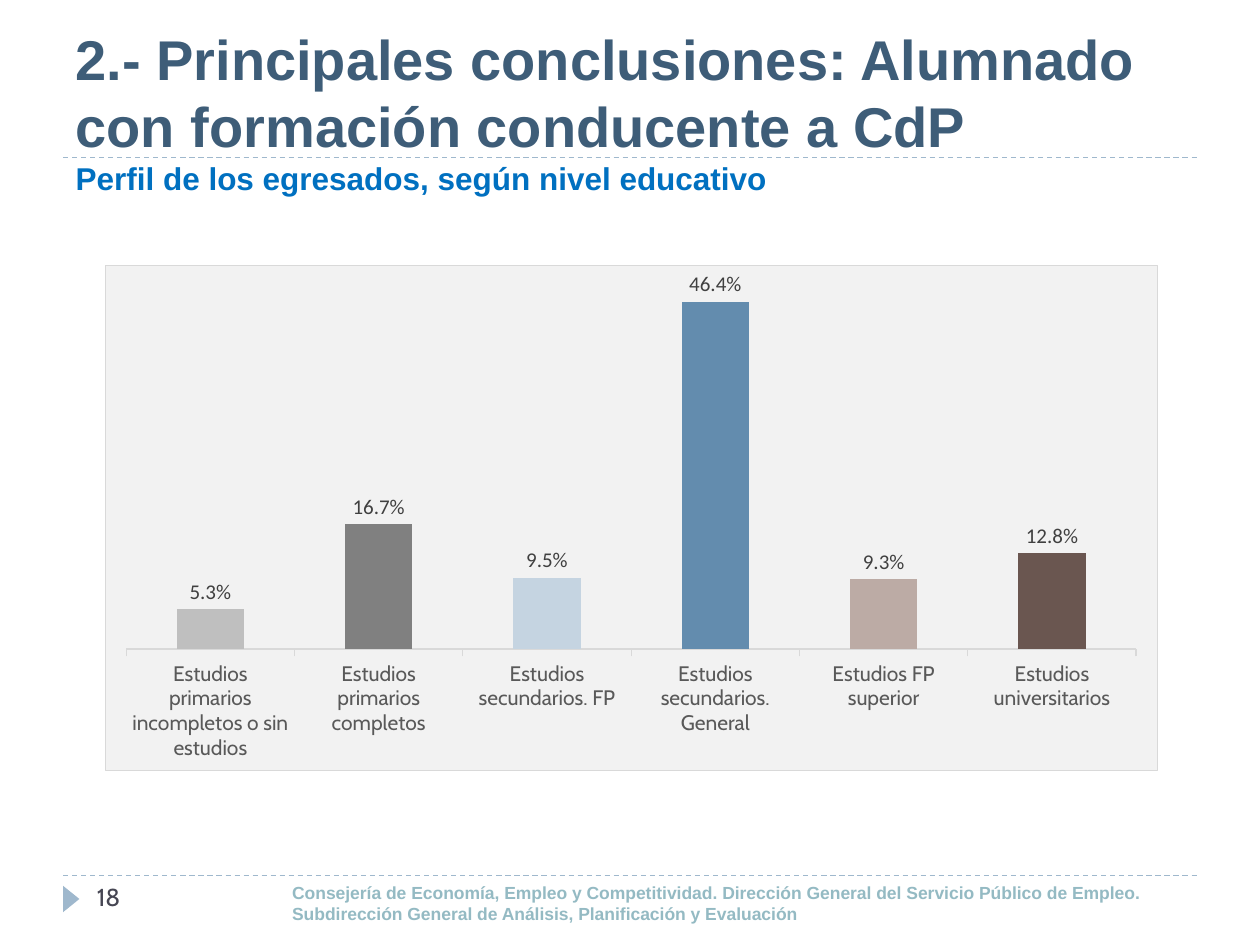
from dataclasses import dataclass

from lxml import etree
from pptx import Presentation
from pptx.chart.data import CategoryChartData
from pptx.dml.color import RGBColor
from pptx.enum.chart import XL_CHART_TYPE, XL_LABEL_POSITION, XL_TICK_LABEL_POSITION, XL_TICK_MARK
from pptx.enum.dml import MSO_LINE
from pptx.enum.shapes import MSO_CONNECTOR, MSO_SHAPE
from pptx.enum.text import MSO_ANCHOR, MSO_AUTO_SIZE, PP_ALIGN
from pptx.oxml.ns import qn
from pptx.util import Inches, Pt

COLUMN = XL_CHART_TYPE.COLUMN_CLUSTERED
OUTSIDE_END = XL_LABEL_POSITION.OUTSIDE_END
TICK_OUT, TICK_NONE = XL_TICK_MARK.OUTSIDE, XL_TICK_MARK.NONE


@dataclass(frozen=True)
class Theme:
    head: str = "Arial"
    body: str = "Cabin"
    label: str = "Calibri"
    title: str = "3E5D78"
    subtitle: str = "0070C0"
    accent: str = "9FB8CD"
    footer: str = "94BAC3"
    number: str = "464653"
    category: str = "595959"
    value: str = "404040"
    panel: str = "F2F2F2"
    border: str = "D9D9D9"
    title_pt: int = 32
    subtitle_pt: int = 18
    number_pt: int = 14
    chart_pt: int = 12
    footer_pt: int = 10


T = Theme()
W, H, MARGIN = 10, 7.5, 0.5
TITLE_RULE, FOOTER_TOP = 1.25, 6.95

TITLE = "2.- Principales conclusiones: Alumnado con formación conducente a CdP"
SUBTITLE = "Perfil de los egresados, según nivel educativo"
FOOTER = [
    "Consejería de Economía, Empleo y Competitividad. Dirección General del Servicio Público de Empleo.",
    "Subdirección General de Análisis, Planificación y Evaluación",
]
PAGE = "18"
LEVELS = [
    ("Estudios primarios incompletos o sin estudios", 0.053, "BFBFBF"),
    ("Estudios primarios completos", 0.167, "808080"),
    ("Estudios secundarios. FP", 0.095, "C5D4E1"),
    ("Estudios secundarios. General", 0.464, "638CAE"),
    ("Estudios FP superior", 0.093, "BCABA5"),
    ("Estudios universitarios", 0.128, "6A5650"),
]
PLOT = {"x": 0.02, "y": 0.02, "w": 0.96, "h": 0.74}


def rgb(value):
    return RGBColor.from_string(value)


def style(font, name, size, color, bold=False):
    font.name, font.size, font.bold = name, Pt(size), bold
    font.color.rgb = rgb(color)


def fill(fmt, color):
    fmt.fill.solid()
    fmt.fill.fore_color.rgb = rgb(color)


def add_rule(s, y):
    line = s.shapes.add_connector(
        MSO_CONNECTOR.STRAIGHT, Inches(MARGIN), Inches(y), Inches(W - MARGIN), Inches(y))
    line.line.color.rgb = rgb(T.accent)
    line.line.width = Pt(0.75)
    line.line.dash_style = MSO_LINE.DASH
    etree.SubElement(line._element.spPr, qn("a:effectLst"))


def add_text(s, box, lines, *look):
    tf = s.shapes.add_textbox(*map(Inches, box)).text_frame
    tf.word_wrap = True
    tf.text = "\n".join(lines)
    for p in tf.paragraphs:
        style(p.runs[0].font, *look)


def add_marker(s):
    sp = s.shapes.add_shape(
        MSO_SHAPE.ISOSCELES_TRIANGLE, Inches(0.46), Inches(7.07), Inches(0.21), Inches(0.13))
    sp.rotation = 90
    sp.shadow.inherit = False
    fill(sp, T.accent)
    sp.line.fill.background()


def set_title(s):
    sp = s.shapes.title
    sp.left, sp.top, sp.width, sp.height = map(Inches, (MARGIN, 0.13, W - 2 * MARGIN, 1.48))
    tf = sp.text_frame
    tf.auto_size = MSO_AUTO_SIZE.NONE
    tf.vertical_anchor = MSO_ANCHOR.BOTTOM
    p = tf.paragraphs[0]
    p.text = f"{TITLE}\v{SUBTITLE}"
    p.alignment = PP_ALIGN.LEFT
    style(p.runs[0].font, T.head, T.title_pt, T.title, True)
    style(p.runs[1].font, T.head, T.subtitle_pt, T.subtitle, True)
    for br in p._p.findall(qn("a:br")):
        etree.SubElement(br, qn("a:rPr"), sz=str(T.title_pt * 100))


def format_panel(chart):
    space = chart._chartSpace
    sppr = etree.Element(qn("c:spPr"))
    line = etree.Element(qn("a:ln"), w=str(Pt(0.75)))
    for parent, color in ((sppr, T.panel), (line, T.border)):
        solid = etree.SubElement(parent, qn("a:solidFill"))
        etree.SubElement(solid, qn("a:srgbClr"), val=color)
    sppr.append(line)
    space.find(qn("c:chart")).addnext(sppr)

    area = space.find(f".//{qn('c:plotArea')}")
    for old in area.findall(qn("c:layout")):
        area.remove(old)
    layout = etree.Element(qn("c:layout"))
    manual = etree.SubElement(layout, qn("c:manualLayout"))
    settings = {"layoutTarget": "inner", "xMode": "edge", "yMode": "edge", **PLOT}
    for tag, val in settings.items():
        etree.SubElement(manual, qn(f"c:{tag}"), val=str(val))
    area.insert(0, layout)


def add_level_chart(s):
    data = CategoryChartData(number_format="0.0%")
    data.categories = [name for name, _, _ in LEVELS]
    data.add_series("Series 1", [value for _, value, _ in LEVELS])
    box = map(Inches, (0.83, 2.1, 8.36, 4.02))
    chart = s.shapes.add_chart(COLUMN, *box, data).chart
    chart.has_legend = chart.has_title = False
    style(chart.font, T.body, 10, "000000")

    axis = chart.category_axis
    axis.major_tick_mark = TICK_OUT
    axis.minor_tick_mark = TICK_NONE
    axis.tick_label_position = XL_TICK_LABEL_POSITION.LOW
    axis.format.line.color.rgb = rgb(T.border)
    axis.format.line.width = Pt(0.75)
    style(axis.tick_labels.font, T.body, T.chart_pt, T.category)
    values = chart.value_axis
    values.minimum_scale, values.maximum_scale = 0, 0.5
    values.has_major_gridlines = False
    values.visible = False

    plot = chart.plots[0]
    plot.gap_width = 150
    plot.vary_by_categories = False
    series = plot.series[0]
    for i, (_, _, color) in enumerate(LEVELS):
        fill(series.points[i].format, color)
    labels = series.data_labels
    labels.show_value = True
    labels.number_format, labels.number_format_is_linked = "0.0%", False
    labels.position = OUTSIDE_END
    style(labels.font, T.label, T.chart_pt, T.value)
    format_panel(chart)


def main():
    prs = Presentation()
    prs.slide_width, prs.slide_height = Inches(W), Inches(H)
    s = prs.slides.add_slide(prs.slide_layouts[5])
    for y in (FOOTER_TOP, TITLE_RULE):
        add_rule(s, y)
    add_marker(s)
    add_text(s, (2.22, FOOTER_TOP, 7.88, 0.44), FOOTER, T.head, T.footer_pt, T.footer, True)
    add_text(s, (0.67, FOOTER_TOP, 2.17, 0.4), [PAGE], T.body, T.number_pt, T.number)
    set_title(s)
    add_level_chart(s)
    prs.save("out.pptx")


if __name__ == "__main__":
    main()
